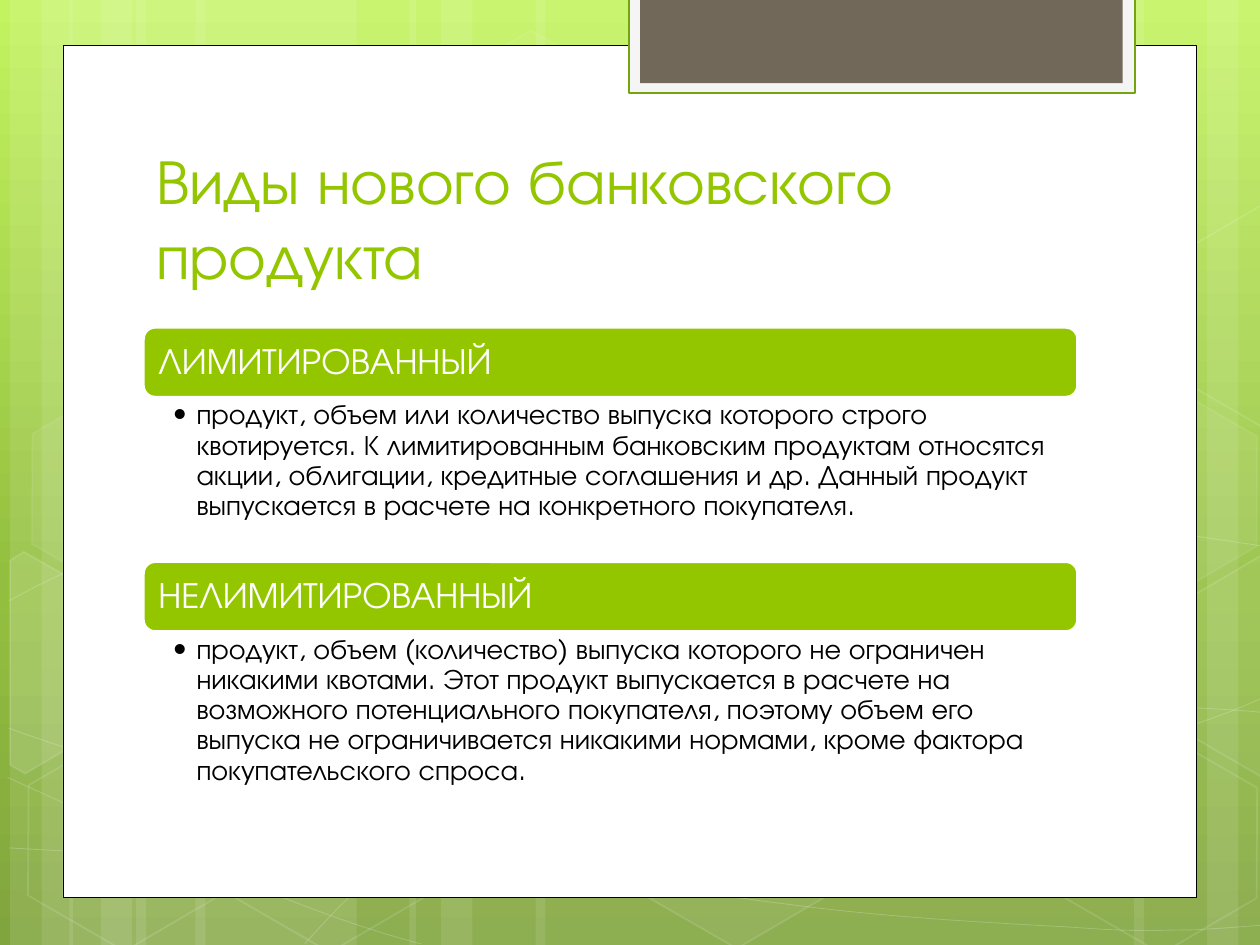
import dataclasses
import itertools

import lxml.etree
import pptx
import pptx.dml.color
import pptx.enum.shapes
import pptx.enum.text
import pptx.oxml.ns
import pptx.util

EMU_PER_PX = 9144  # 100 px to the inch
SHAPES = pptx.enum.shapes.MSO_SHAPE
ANCHORS = pptx.enum.text.MSO_ANCHOR


@dataclasses.dataclass(frozen=True)
class Theme:
    font: str = "TeX Gyre Adventor"
    title_size: int = 36
    heading_size: int = 21
    body_size: int = 16
    green: str = "94C600"
    dark_green: str = "74A510"
    brown: str = "71685A"
    pale: str = "F5F5F5"
    white: str = "FFFFFF"
    black: str = "000000"
    sky: tuple = ((0, "C3F35F"), (62, "93BF3F"), (100, "81A53E"))


@dataclasses.dataclass(frozen=True)
class Box:
    left: int
    top: int
    width: int
    height: int

    def inside(self, left, top, width, height):
        return Box(self.left + left, self.top + top, width, height)

    def emu(self):
        return [px(value) for value in dataclasses.astuple(self)]


THEME = Theme()

# left, width
BARS = [(108, 175), (8, 50), (33, 83), (155, 175), (55, 50), (80, 83),
        (733, 175), (958, 50), (900, 83), (425, 308), (325, 50), (350, 83)]
# start point, then straight segments (2 numbers) or Bézier segments (6 numbers)
CURVES = [
    [(7, 673), (61, 676, 115, 679, 190, 678), (265, 677, 358, 675, 458, 665),
     (558, 655, 700, 636, 792, 617), (883, 598, 977, 568, 1007, 551)],
    [(7, 477), (36, 461, 65, 446, 121, 431), (178, 416, 259, 394, 347, 387),
     (436, 380, 544, 379, 654, 387), (764, 395, 947, 426, 1007, 434)],
    [(6, 617), (127, 672, 247, 727, 334, 749)],
    [(7, 578), (38, 589, 70, 600, 128, 616), (186, 631, 273, 656, 357, 673),
     (440, 690, 545, 708, 628, 718), (711, 729, 800, 733, 853, 736),
     (905, 740, 919, 738, 945, 738), (971, 737, 989, 735, 1007, 734)],
    [(242, 749), (260, 729, 278, 709, 302, 691), (326, 673, 360, 653, 388, 639),
     (416, 625, 433, 619, 470, 609), (506, 599, 573, 585, 608, 578),
     (644, 571, 649, 571, 680, 569), (711, 566, 760, 563, 794, 562),
     (829, 561, 886, 562, 886, 562), (953, 562),
     (971, 563, 988, 564, 997, 565), (1006, 566, 1003, 565, 1006, 566)],
]
# left, top, fill opacity, line opacity
HEXAGONS = [(334, 36, 4, 8), (497, 589, 6, 12), (11, 591, 0, 12),
            (14, 312, 7, 8), (174, 592, 0, 12), (753, 453, 10, 12),
            (834, 593, 0, 12), (834, 314, 7, 8)]
# corner points, fill opacity
CUT_HEXAGONS = [
    ([(8, 445), (19, 438), (96, 482), (95, 570), (20, 614), (8, 607)], 10),
    ([(926, 485), (1001, 441), (1009, 446), (1009, 613), (1002, 617), (926, 573)], 4),
    ([(926, 207), (1001, 163), (1010, 168), (1009, 335), (1002, 339), (926, 295)], 0),
]
SECTIONS = [
    ("ЛИМИТИРОВАННЫЙ",
     "продукт, объем или количество выпуска которого строго квотируется. "
     "К лимитированным банковским продуктам относятся акции, облигации, "
     "кредитные соглашения и др. Данный продукт выпускается в расчете на "
     "конкретного покупателя."),
    ("НЕЛИМИТИРОВАННЫЙ",
     "продукт, объем (количество) выпуска которого не ограничен никакими "
     "квотами. Этот продукт выпускается в расчете на возможного потенциального "
     "покупателя, поэтому объем его выпуска не ограничивается никакими нормами, "
     "кроме фактора покупательского спроса."),
]


def px(value):
    return pptx.util.Emu(round(value * EMU_PER_PX))


def add_xml(parent, tag, **attributes):
    return lxml.etree.SubElement(parent, pptx.oxml.ns.qn(tag), attributes)


def set_color(fill, owner, color, opacity):
    """Color the fill kept in the owner element; opacity is a percentage, 0 for no fill."""
    if not opacity:
        fill.background()
        return
    fill.solid()
    fill.fore_color.rgb = pptx.dml.color.RGBColor.from_string(color)
    if opacity < 100:
        solid = owner.find(pptx.oxml.ns.qn("a:solidFill"))
        add_xml(solid[0], "a:alpha", val=str(opacity * 1000))


def paint(shape, fill, fill_opacity=100, line=None, line_width=1, line_opacity=100):
    properties = shape.element.spPr
    shape.shadow.inherit = False
    set_color(shape.fill, properties, fill, fill_opacity)
    shape.line.width = pptx.util.Pt(line_width)
    outline = properties.find(pptx.oxml.ns.qn("a:ln"))
    set_color(shape.line.fill, outline, line, line_opacity if line else 0)


def add_box(slide, box, kind=SHAPES.RECTANGLE, **style):
    shape = slide.shapes.add_shape(kind, *box.emu())
    paint(shape, **style)
    return shape


def bend(shape, segments):
    """Join each three straight steps of a Bézier segment into one curve."""
    steps = iter(list(shape.element.iter(pptx.oxml.ns.qn("a:lnTo"))))
    for segment in segments:
        first, *others = itertools.islice(steps, len(segment) // 2)
        if others:
            first.tag = pptx.oxml.ns.qn("a:cubicBezTo")
            for step in others:
                first.append(step[0])
                step.getparent().remove(step)


def add_path(slide, box, segments, close, **style):
    numbers = list(itertools.chain.from_iterable(segments))
    points = [(px(box.left + x), px(box.top + y))
              for x, y in zip(numbers[::2], numbers[1::2])]
    builder = slide.shapes.build_freeform(*points[0])
    builder.add_line_segments(points[1:], close=close)
    shape = builder.convert_to_shape()
    bend(shape, segments[1:])
    paint(shape, **style)


def write(shape, text, *, size, color, anchor=ANCHORS.TOP, insets=(10, 5, 10, 5),
          line_spacing=1.0, bullet=None, indent=19):
    frame = shape.text_frame
    frame.word_wrap = True
    frame.vertical_anchor = anchor
    (frame.margin_left, frame.margin_top,
     frame.margin_right, frame.margin_bottom) = map(px, insets)
    paragraph = frame.paragraphs[0]
    paragraph.alignment = pptx.enum.text.PP_ALIGN.LEFT
    paragraph.line_spacing = line_spacing
    run = paragraph.add_run()
    run.text = text
    run.font.name = THEME.font
    run.font.size = pptx.util.Pt(size)
    run.font.color.rgb = pptx.dml.color.RGBColor.from_string(color)
    if bullet:
        properties = paragraph._p.get_or_add_pPr()
        properties.set("marL", str(px(indent)))
        properties.set("indent", str(-px(indent)))
        add_xml(properties, "a:buFont", typeface=THEME.font)
        add_xml(properties, "a:buChar", char=bullet)


def set_background(slide):
    fill = slide.background.fill
    fill.gradient()
    fill.gradient_angle = 270
    stops = next(slide.element.iter(pptx.oxml.ns.qn("a:gsLst")))
    for stop in list(stops):
        stops.remove(stop)
    for position, color in THEME.sky:
        stop = add_xml(stops, "a:gs", pos=str(position * 1000))
        add_xml(stop, "a:srgbClr", val=color)


def add_backdrop(slide, box):
    white = THEME.white
    for left, width in BARS:
        add_box(slide, box.inside(left, 0, width, box.height), fill=white, fill_opacity=10)
    for curve in CURVES:
        add_path(slide, box, curve, False, fill=white, fill_opacity=0,
                 line=white, line_width=0.5, line_opacity=20)
    for left, top, fill_opacity, line_opacity in HEXAGONS:
        hexagon = add_box(slide, box.inside(left, top, 175, 152), SHAPES.HEXAGON,
                          fill=white, fill_opacity=fill_opacity,
                          line=white, line_opacity=line_opacity)
        hexagon.adjustments[0] = 0.285
        hexagon.rotation = 30
    for corners, fill_opacity in CUT_HEXAGONS:
        add_path(slide, box, corners, True, fill=white, fill_opacity=fill_opacity,
                 line=white, line_opacity=12)


def add_card(slide, box):
    """Place the white card and the tab that hangs over its top edge."""
    add_box(slide, box, fill=THEME.white, line=THEME.black, line_width=0.5)
    add_box(slide, box.inside(449, -38, 402, 76), fill=THEME.pale,
            line=THEME.dark_green, line_width=1.25)
    add_box(slide, box.inside(458, -38, 383, 68), fill=THEME.brown)


def add_title(slide, box):
    write(slide.shapes.add_textbox(*box.emu()), "Виды нового банковского продукта",
          size=THEME.title_size, color=THEME.green, anchor=ANCHORS.BOTTOM)


def add_section(slide, box, heading, body):
    heading_height = 55
    header = add_box(slide, box.inside(0, 0, box.width, heading_height),
                     SHAPES.ROUNDED_RECTANGLE, fill=THEME.green,
                     line=THEME.white, line_width=1.25)
    write(header, heading, size=THEME.heading_size, color=THEME.white,
          anchor=ANCHORS.MIDDLE, insets=(9, 9, 9, 9), line_spacing=0.9)
    body_box = box.inside(0, heading_height, box.width, box.height - heading_height)
    write(slide.shapes.add_textbox(*body_box.emu()), body, size=THEME.body_size,
          color=THEME.black, insets=(23, 3, 16, 3), line_spacing=0.9, bullet="•")


def main():
    page = Box(0, 0, 1000, 750)
    presentation = pptx.Presentation()
    presentation.slide_width, presentation.slide_height = px(page.width), px(page.height)
    slide = presentation.slides.add_slide(presentation.slide_layouts[6])
    set_background(slide)
    add_backdrop(slide, page)
    add_card(slide, Box(50, 36, 900, 676))
    add_title(slide, Box(114, 112, 768, 125))
    section = Box(114, 260, 741, 186)
    for index, (heading, body) in enumerate(SECTIONS):
        place = section.inside(0, index * section.height, section.width, section.height)
        add_section(slide, place, heading, body)
    presentation.save("out.pptx")


if __name__ == "__main__":
    main()
